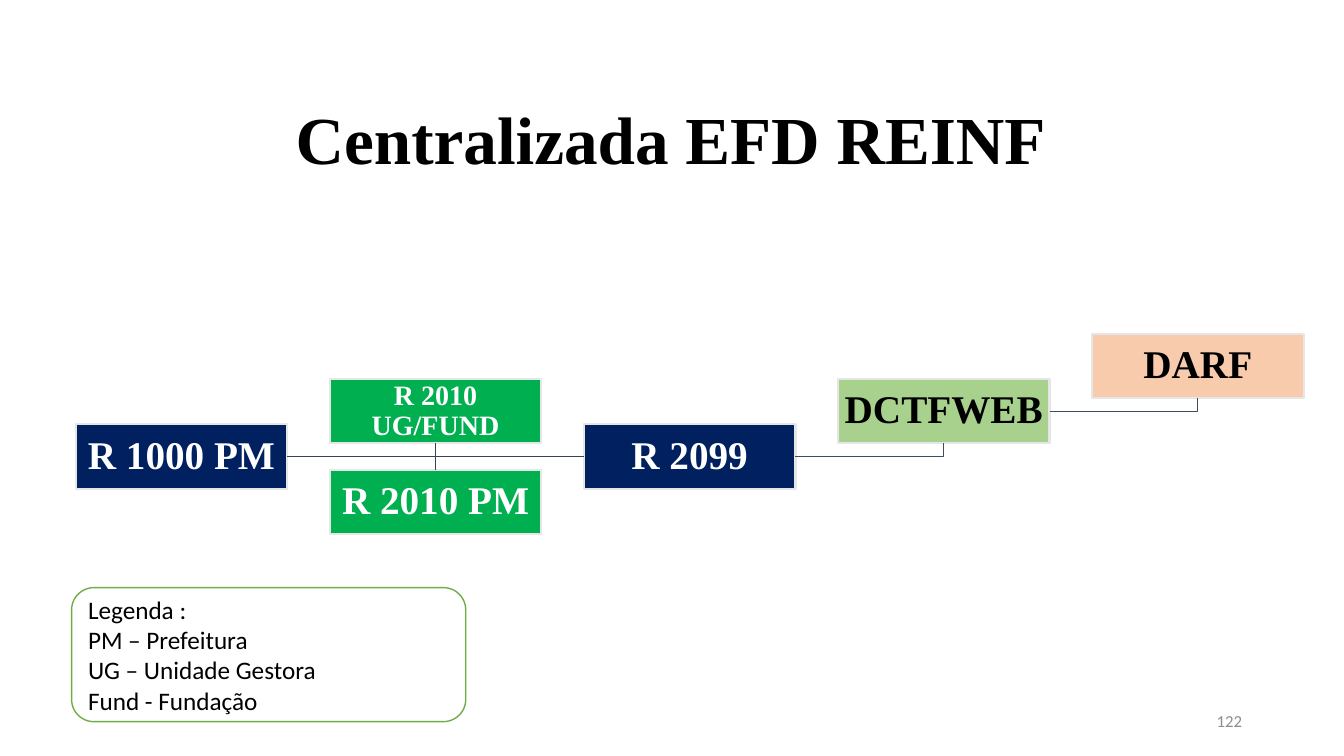
from pptx import Presentation
from pptx.dml.color import RGBColor
from pptx.enum.shapes import MSO_CONNECTOR as Connector, MSO_SHAPE as Shape
from pptx.enum.text import MSO_ANCHOR as Anchor, MSO_AUTO_SIZE as AutoSize, PP_ALIGN as Align
from pptx.util import Inches, Pt

SERIF, SANS = "Times New Roman", "Calibri"
NAVY, GREEN, LIME, PEACH = "002060", "00B050", "A9D18E", "F8CBAD"
BLACK, WHITE, GRAY = "000000", "FFFFFF", "8C8C8C"
BORDER, OUTLINE, SLATE, STEEL = "E7E6E6", "70AD47", "364355", "3E4C60"
TOP, RIGHT, BOTTOM, LEFT = 0, 3, 2, 1


def color(code):
    return RGBColor.from_string(code)


class FlowSlide:
    """Slide with a grid of steps; column and row count from the top-left step."""

    grid_left, grid_top = Inches(0.75), Inches(3.31)
    column_step, row_step = Inches(2.52), Inches(0.45)
    box_width, box_height = Inches(2.1), Inches(0.64)

    def __init__(self, deck):
        self.page = deck.slides.add_slide(deck.slide_layouts[5])
        self.shapes = self.page.shapes

    def add_text(self, frame, lines, size, font, ink, align, bold=False, spacing=1.0):
        frame.word_wrap = True
        frame.auto_size = AutoSize.NONE
        for index, line in enumerate(lines):
            para = frame.add_paragraph() if index else frame.paragraphs[0]
            para.alignment, para.line_spacing = align, spacing
            span = para.add_run()
            span.text = line
            span.font.name, span.font.size, span.font.bold = font, Pt(size), bold
            span.font.color.rgb = color(ink)

    def title(self, text, left, top, width, height):
        box = self.shapes.title
        box.left, box.top, box.width, box.height = map(Inches, (left, top, width, height))
        box.text_frame.vertical_anchor = Anchor.BOTTOM
        self.add_text(box.text_frame, [text], 48, SERIF, BLACK, Align.CENTER, True, 0.9)

    def page_number(self, text, left, top, width, height):
        frame = self.shapes.add_textbox(*map(Inches, (left, top, width, height))).text_frame
        frame.vertical_anchor = Anchor.MIDDLE
        self.add_text(frame, [text], 12, SANS, GRAY, Align.RIGHT)

    def panel(self, kind, left, top, width, height, fill, line, weight):
        box = self.shapes.add_shape(kind, left, top, width, height)
        box.shadow.inherit = False
        box.fill.solid()
        box.fill.fore_color.rgb = color(fill)
        box.line.color.rgb = color(line)
        box.line.width = Pt(weight)
        box.text_frame.vertical_anchor = Anchor.MIDDLE
        return box

    def step(self, text, column, row, fill, ink, size=28):
        box = self.panel(Shape.RECTANGLE, self.grid_left + column * self.column_step,
                         self.grid_top + row * self.row_step,
                         self.box_width, self.box_height, fill, BORDER, 1.5)
        frame = box.text_frame
        frame.margin_left = frame.margin_right = Inches(0.02)
        frame.margin_top = frame.margin_bottom = Inches(0.02)
        self.add_text(frame, [text], size, SERIF, ink, Align.CENTER, True, 0.9)
        return box

    def legend(self, lines, left, top, width, height):
        box = self.panel(Shape.ROUNDED_RECTANGLE, *map(Inches, (left, top, width, height)),
                         WHITE, OUTLINE, 1)
        self.add_text(box.text_frame, lines, 18, SANS, BLACK, Align.LEFT)

    def straight(self, start, end, ink):
        link = self.shapes.add_connector(Connector.STRAIGHT, 0, 0, 0, 0)
        link.begin_connect(start, RIGHT)
        link.end_connect(end, LEFT)
        link.line.color.rgb = color(ink)
        link.line.width = Pt(1)
        properties = link._element.spPr
        properties.append(properties.makeelement(
            "{http://schemas.openxmlformats.org/drawingml/2006/main}effectLst", {}))

    def elbow(self, start, end, side, ink):
        """Draw from the right of start to the middle of the top or bottom of end."""
        x, y = start.left + start.width, start.top + start.height // 2
        corner = end.left + end.width // 2
        edge = end.top if side == TOP else end.top + end.height
        builder = self.shapes.build_freeform(x, y)
        builder.add_line_segments([(corner, y), (corner, edge)], close=False)
        link = builder.convert_to_shape()
        link.shadow.inherit = False
        link.fill.background()
        link.line.color.rgb = color(ink)
        link.line.width = Pt(1)


def main():
    deck = Presentation()
    deck.slide_width, deck.slide_height = Inches(13.33), Inches(7.5)
    flow = FlowSlide(deck)
    flow.title("Centralizada EFD REINF", 0.63, 0.26, 12.05, 1.57)
    flow.page_number("122", 9.42, 6.95, 3, 0.4)

    opening = flow.step("R 1000 PM", 0, 2, NAVY, WHITE)
    closing = flow.step("R 2099", 2, 2, NAVY, WHITE)
    declaration = flow.step("DCTFWEB", 3, 1, LIME, BLACK)
    payment = flow.step("DARF", 4, 0, PEACH, BLACK)
    units = flow.step("R 2010 UG/FUND", 1, 1, GREEN, WHITE, 20)
    city = flow.step("R 2010 PM", 1, 3, GREEN, WHITE)

    flow.straight(opening, closing, SLATE)
    for start, end, side, ink in [
        (opening, city, TOP, SLATE),
        (opening, units, BOTTOM, SLATE),
        (closing, declaration, BOTTOM, STEEL),
        (declaration, payment, BOTTOM, STEEL),
    ]:
        flow.elbow(start, end, side, ink)

    flow.legend(["Legenda :", "PM – Prefeitura", "UG – Unidade Gestora", "Fund - Fundação"],
                0.71, 5.83, 3.91, 1.33)
    deck.save("out.pptx")


if __name__ == "__main__":
    main()
